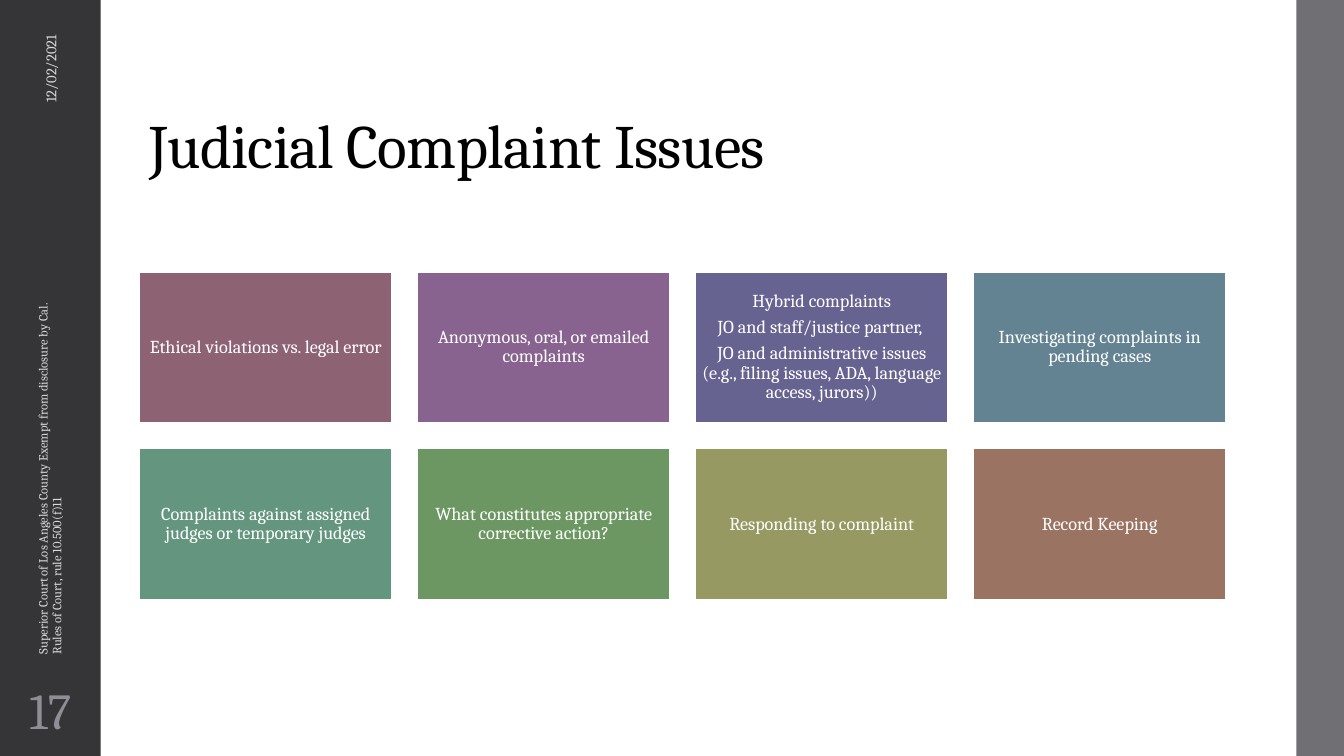
from pptx import Presentation
from pptx.dml.color import RGBColor
from pptx.enum.shapes import MSO_SHAPE
from pptx.enum.text import MSO_ANCHOR, MSO_AUTO_SIZE, PP_ALIGN
from pptx.util import Pt

COLORS = {
    "sidebar": "353537",
    "edge": "6F6F74",
    "white": "FFFFFF",
    "title": "000000",
    "footer": "D9D9DB",
    "number": "8E8E94",
}


def add_rectangle(left, top, width, height, color):
    shape = slide.shapes.add_shape(
        MSO_SHAPE.RECTANGLE, Pt(left), Pt(top), Pt(width), Pt(height)
    )
    shape.shadow.inherit = False
    shape.fill.solid()
    shape.fill.fore_color.rgb = RGBColor.from_string(color)
    shape.line.fill.background()
    return shape


def write(shape, lines, size, color, align, space_after, spacing=0.9, margin=None):
    frame = shape.text_frame
    frame.text = "\n".join(lines)
    frame.word_wrap = True
    frame.auto_size = MSO_AUTO_SIZE.NONE
    frame.vertical_anchor = MSO_ANCHOR.MIDDLE
    if margin is not None:
        frame.margin_left = frame.margin_right = Pt(margin)
        frame.margin_top = frame.margin_bottom = Pt(margin)
    for paragraph in frame.paragraphs:
        paragraph.alignment = align
        paragraph.line_spacing = spacing
        paragraph.space_before = Pt(0)
        paragraph.space_after = Pt(space_after)
        paragraph.font.name = "Cambria"
        paragraph.font.size = Pt(size)
        paragraph.font.color.rgb = RGBColor.from_string(color)


presentation = Presentation()
presentation.slide_width = Pt(960)
presentation.slide_height = Pt(540)
slide = presentation.slides.add_slide(presentation.slide_layouts[5])

title = slide.shapes.title
title.left, title.top, title.width, title.height = Pt(99.4), Pt(28.8), Pt(776), Pt(104.4)
write(title, ["Judicial Complaint Issues"], 44, COLORS["title"], PP_ALIGN.LEFT, 0)
title.text_frame.vertical_anchor = MSO_ANCHOR.BOTTOM
title.text_frame.paragraphs[0].runs[0].font._element.set("spc", "-50")

add_rectangle(0, 0, 72, 540, COLORS["sidebar"])
add_rectangle(926, 0, 34, 540, COLORS["edge"])

date = slide.shapes.add_textbox(Pt(-38.9), Pt(78.5), Pt(149.8), Pt(28.8))
date.rotation = 270
write(date, ["12/02/2021"], 10.5, COLORS["footer"], PP_ALIGN.RIGHT, 6, 1.0)

footer = slide.shapes.add_textbox(Pt(-105.1), Pt(319), Pt(282.2), Pt(28.8))
footer.rotation = 270
footer_text = (
    "Superior Court of Los Angeles County Exempt from disclosure by Cal. "
    "Rules of Court, rule 10.500(f)11"
)
write(footer, [footer_text], 9, COLORS["footer"], PP_ALIGN.LEFT, 6)

number = slide.shapes.add_textbox(Pt(0), Pt(486), Pt(72), Pt(46.8))
write(number, ["17"], 36, COLORS["number"], PP_ALIGN.CENTER, 6, margin=3.6)

issues = [
    ("8D6374", ["Ethical violations vs. legal error"]),
    ("88638F", ["Anonymous, oral, or emailed complaints"]),
    ("676391", [
        "Hybrid complaints",
        "JO and staff/justice partner, ",
        "JO and administrative issues (e.g., filing issues, ADA, language access, jurors))",
    ]),
    ("638393", ["Investigating complaints in pending cases"]),
    ("63957F", ["Complaints against assigned judges or temporary judges"]),
    ("6C9762", ["What constitutes appropriate corrective action?"]),
    ("969962", ["Responding to complaint"]),
    ("9B7362", ["Record Keeping"]),
]
for index, (color, lines) in enumerate(issues):
    row, column = divmod(index, 4)
    card = add_rectangle(99.4 + column * 198.6, 194 + row * 126.4, 180.6, 108, color)
    card.line.color.rgb = RGBColor.from_string(COLORS["white"])
    card.line.width = Pt(1.35)
    write(card, lines, 13, COLORS["white"], PP_ALIGN.CENTER, 4.55, margin=3.6)

presentation.save("out.pptx")
